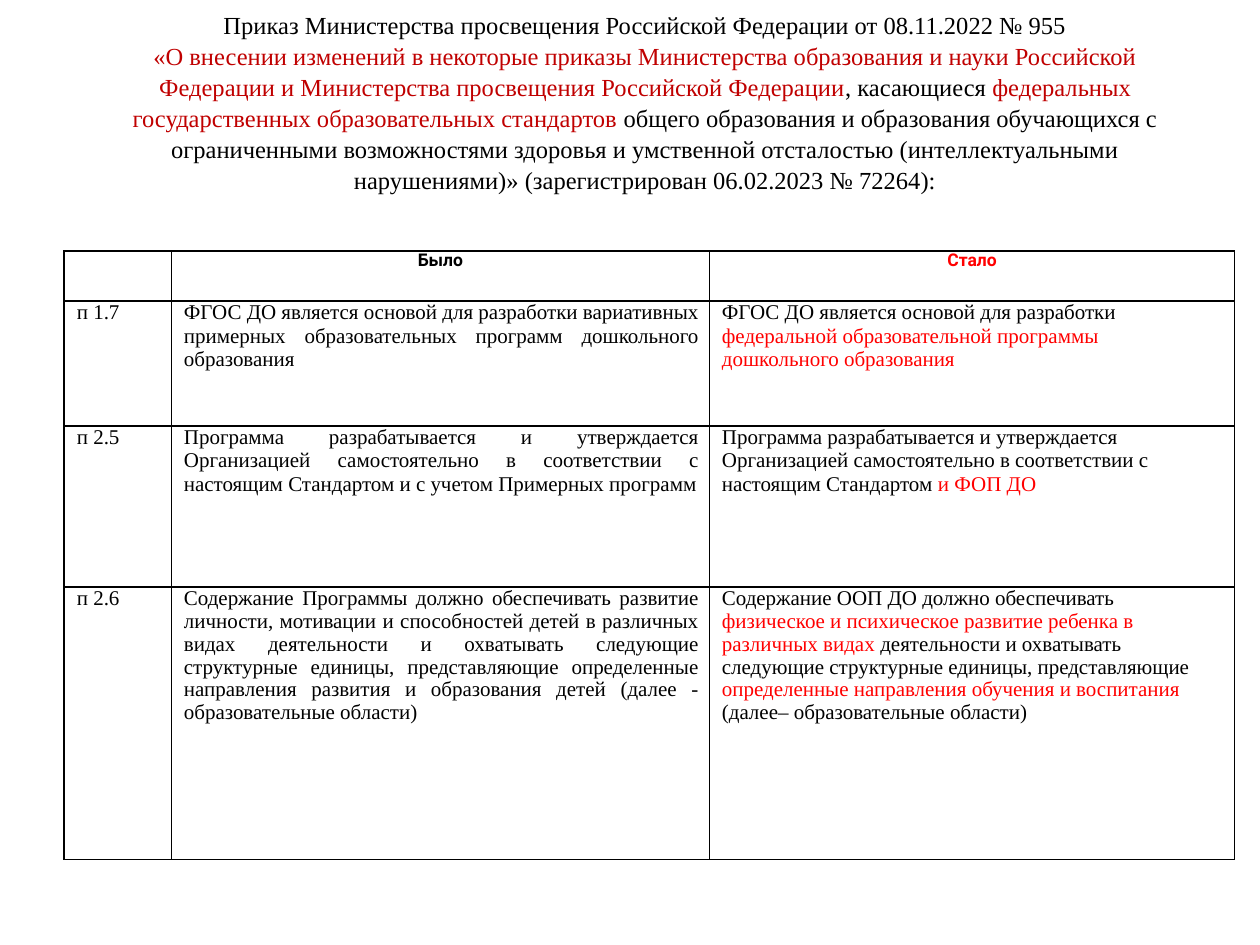
from lxml import etree
from pptx import Presentation
from pptx.dml.color import RGBColor
from pptx.enum.text import MSO_ANCHOR, PP_ALIGN
from pptx.oxml.ns import qn
from pptx.util import Inches, Pt

CENTER, LEFT, JUSTIFY = PP_ALIGN.CENTER, PP_ALIGN.LEFT, PP_ALIGN.JUSTIFY
MIDDLE = MSO_ANCHOR.MIDDLE
SERIF, SANS = "Times New Roman", "Roboto"
BLACK, RED, DARK_RED = "000000", "FF0000", "C00000"
COLUMNS = [0.85, 4.27, 4.17]
ROWS = [0.4, 0.99, 1.28, 2.16]

TITLE = [
    [("Приказ Министерства просвещения Российской Федерации от 08.11.2022 № 955", BLACK)],
    [("«О внесении изменений в некоторые приказы Министерства образования и науки "
      "Российской Федерации и Министерства просвещения Российской Федерации", DARK_RED),
     (", касающиеся ", BLACK),
     ("федеральных государственных образовательных стандартов ", DARK_RED),
     ("общего образования и образования обучающихся с ограниченными возможностями "
      "здоровья и умственной отсталостью (интеллектуальными нарушениями)» "
      "(зарегистрирован 06.02.2023 № 72264):", BLACK)],
]
HEADER = [[], [("Было", BLACK)], [("Стало", RED)]]
CHANGES = [
    [[("п 1.7", BLACK)],
     [("ФГОС ДО является основой для разработки вариативных примерных "
       "образовательных программ дошкольного образования", BLACK)],
     [("ФГОС ДО является основой для разработки ", BLACK),
      ("федеральной образовательной программы дошкольного образования", RED)]],
    [[("п 2.5", BLACK)],
     [("Программа разрабатывается и утверждается Организацией самостоятельно в "
       "соответствии с настоящим Стандартом и с учетом Примерных программ", BLACK)],
     [("Программа разрабатывается и утверждается Организацией самостоятельно в "
       "соответствии с настоящим Стандартом ", BLACK),
      ("и ФОП ДО", RED)]],
    [[("п 2.6", BLACK)],
     [("Содержание Программы должно обеспечивать развитие личности, мотивации и "
       "способностей детей в различных видах деятельности и охватывать следующие "
       "структурные единицы, представляющие определенные направления развития и "
       "образования детей (далее - образовательные области)", BLACK)],
     [("Содержание ООП ДО должно обеспечивать ", BLACK),
      ("физическое и психическое развитие ребенка в различных видах ", RED),
      ("деятельности и охватывать следующие структурные единицы, представляющие ", BLACK),
      ("определенные направления обучения и воспитания ", RED),
      ("(далее– образовательные области)", BLACK)]],
]


def rgb(value):
    """Turn a hex string into a colour."""
    return RGBColor.from_string(value)


def write(p, runs, size=12, font=SERIF, bold=False, align=LEFT, before=0, spacing=1.0,
          left=0, right=0):
    """Fill a paragraph with (text, colour) runs in one format."""
    p.alignment, p.line_spacing, p.space_before = align, spacing, Pt(before)
    pPr = p._p.get_or_add_pPr()
    for side, length in (("marL", left), ("marR", right), ("indent", 0)):
        pPr.set(side, str(Inches(length)))
    for text, color in runs:
        r = p.add_run()
        r.text = text
        r.font.size, r.font.name, r.font.bold = Pt(size), font, bold
        r.font.color.rgb = rgb(color)


def add_title(s):
    """Place the two-paragraph title at the top of the slide."""
    sp = s.shapes.title
    sp.left, sp.top, sp.width, sp.height = map(Inches, (0.75, 0.05, 8.74, 1.51))
    tf = sp.text_frame
    tf.word_wrap, tf.vertical_anchor = True, MIDDLE
    for i, runs in enumerate(TITLE):
        p = tf.add_paragraph() if i else tf.paragraphs[0]
        write(p, runs, size=14, align=CENTER, spacing=1.05)


def format_cell(cell):
    """Clear a cell's fill and margins and give it thin black borders."""
    cell.margin_left = cell.margin_right = cell.margin_top = cell.margin_bottom = 0
    tcPr = cell._tc.get_or_add_tcPr()
    for side in ("lnL", "lnR", "lnT", "lnB"):
        ln = etree.SubElement(tcPr, qn(f"a:{side}"), w=str(Pt(1)))
        fill = etree.SubElement(ln, qn("a:solidFill"))
        etree.SubElement(fill, qn("a:srgbClr"), val=BLACK)
    cell.fill.background()


def add_comparison(s):
    """Add the table that sets old wording beside new wording."""
    frame = s.shapes.add_table(len(ROWS), len(COLUMNS), Inches(0.51), Inches(1.99),
                               Inches(sum(COLUMNS)), Inches(sum(ROWS)))
    table = frame.table
    table.horz_banding = table.first_row = False
    for column, width in zip(table.columns, COLUMNS):
        column.width = Inches(width)
    for row, height in zip(table.rows, ROWS):
        row.height = Inches(height)
    for i, row in enumerate([HEADER, *CHANGES]):
        for j, runs in enumerate(row):
            cell = table.cell(i, j)
            format_cell(cell)
            p = cell.text_frame.paragraphs[0]
            if i == 0:
                write(p, runs, size=10, font=SANS, bold=True, align=CENTER, before=3)
            else:
                long_text = i == len(CHANGES) and j > 0
                write(p, runs, align=JUSTIFY if j == 1 else LEFT, before=3, left=0.1,
                      right=(0, 0.08, 0.2)[j], spacing=0.98 if long_text else 1.0)


def main():
    """Build the slide and save it."""
    prs = Presentation()
    prs.slide_width, prs.slide_height = Inches(10), Inches(7.5)
    s = prs.slides.add_slide(prs.slide_layouts[5])
    add_title(s)
    add_comparison(s)
    prs.save("out.pptx")


if __name__ == "__main__":
    main()
